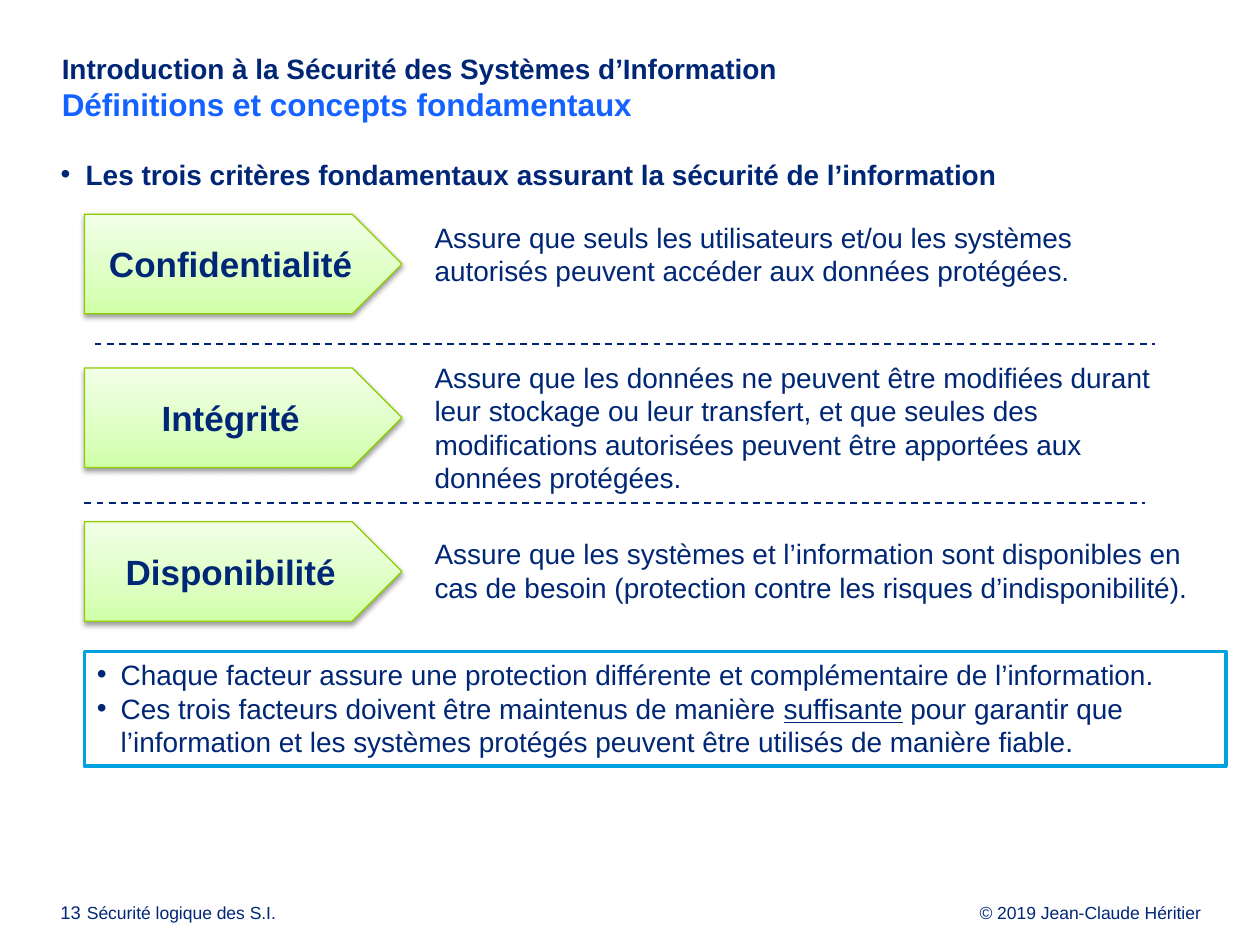
from pptx import Presentation
from pptx.dml.color import RGBColor
from pptx.enum.dml import MSO_LINE
from pptx.enum.shapes import MSO_CONNECTOR as Connector, MSO_SHAPE as Shape
from pptx.enum.text import MSO_ANCHOR as Anchor, MSO_AUTO_SIZE as AutoSize, PP_ALIGN as Align
from pptx.oxml.ns import qn
from pptx.util import Inches, Pt
from lxml.etree import SubElement

NAVY = "002776"
CRITERIA = [
    ("Confidentialité", 1.7,
     "Assure que seuls les utilisateurs et/ou les systèmes autorisés "
     "peuvent accéder aux données protégées."),
    ("Intégrité", 2.81,
     "Assure que les données ne peuvent être modifiées durant leur stockage "
     "ou leur transfert, et que seules des modifications autorisées peuvent "
     "être apportées aux données protégées."),
    ("Disponibilité", 4.21,
     "Assure que les systèmes et l’information sont disponibles en cas de "
     "besoin (protection contre les risques d’indisponibilité)."),
]


def color(value):
    """Turn a hex string into a colour."""
    return RGBColor.from_string(value)


def place(shape, box):
    """Move and size a shape to a box in inches."""
    shape.left, shape.top, shape.width, shape.height = map(Inches, box)


def format_run(run, size, bold=False, value=NAVY):
    """Set the font of a run."""
    font = run.font
    font.name, font.size, font.bold = "Arial", Pt(size), bold
    font.color.rgb = color(value)


def set_frame(shape, margins=(0.1, 0.05, 0.1, 0.05), anchor=Anchor.TOP):
    """Set wrapping, insets and anchor, and return the text frame."""
    frame = shape.text_frame
    frame.word_wrap, frame.auto_size = True, AutoSize.NONE
    frame.vertical_anchor = anchor
    (frame.margin_left, frame.margin_top,
     frame.margin_right, frame.margin_bottom) = map(Inches, margins)
    return frame


def set_bullet(paragraph, indent):
    """Give a paragraph a hanging round bullet."""
    properties = paragraph._p.get_or_add_pPr()
    properties.set("marL", str(Inches(indent)))
    properties.set("indent", str(Inches(-indent)))
    SubElement(properties, qn("a:buFont"), typeface="Arial")
    SubElement(properties, qn("a:buChar"), char="•")


def add_text(slide, box, text, size, align=Align.LEFT, spacing=None, **frame_options):
    """Add a one-paragraph text box."""
    shape = slide.shapes.add_textbox(*map(Inches, box))
    paragraph = set_frame(shape, **frame_options).paragraphs[0]
    paragraph.text, paragraph.alignment = text, align
    paragraph.line_spacing = spacing
    format_run(paragraph.runs[0], size)


def add_heading(slide, box):
    """Fill the title placeholder with its two lines."""
    title = slide.shapes.title
    place(title, box)
    paragraph = set_frame(title, (0.04, 0.03, 0, 0)).paragraphs[0]
    paragraph.text = ("Introduction à la Sécurité des Systèmes d’Information \v"
                      "Définitions et concepts fondamentaux")
    paragraph.alignment = Align.LEFT
    format_run(paragraph.runs[0], 16, True)
    format_run(paragraph.runs[1], 18, True, "1462FF")


def add_lead(slide, box):
    """Fill the body placeholder with the lead bullet."""
    body = slide.placeholders[1]
    place(body, box)
    paragraph = set_frame(body, (0.04, 0.02, 0, 0)).paragraphs[0]
    paragraph.text = "Les trois critères fondamentaux assurant la sécurité de l’information"
    paragraph.space_before = Pt(0)
    set_bullet(paragraph, 0.2)
    format_run(paragraph.runs[0], 16, True)


def add_arrow(slide, box, label):
    """Add a green gradient arrow with a soft shadow."""
    shape = slide.shapes.add_shape(Shape.PENTAGON, *map(Inches, box))
    shape.fill.gradient()
    shape.fill.gradient_angle = 90
    properties = shape._element.spPr
    stops = properties.find(qn("a:gradFill")).find(qn("a:gsLst"))
    for stop in list(stops):
        stops.remove(stop)
    for position, value in ((0, "D0FFA8"), (35, "DDFFC2"), (100, "F2FFE8")):
        stop = SubElement(stops, qn("a:gs"), pos=str(position * 1000))
        SubElement(stop, qn("a:srgbClr"), val=value)
    shape.line.color.rgb, shape.line.width = color("8FCF00"), Pt(0.75)
    shape.shadow.inherit = False
    shadow = SubElement(properties.find(qn("a:effectLst")), qn("a:outerShdw"),
                        blurRad=str(Pt(3.1)), dist=str(Pt(1.6)), dir="5400000", rotWithShape="0")
    shade = SubElement(shadow, qn("a:srgbClr"), val="000000")
    SubElement(shade, qn("a:alpha"), val="38000")
    paragraph = set_frame(shape, anchor=Anchor.MIDDLE).paragraphs[0]
    paragraph.text, paragraph.alignment = label, Align.CENTER
    format_run(paragraph.runs[0], 20, True)


def add_separator(slide, left, top, width):
    """Add a dashed horizontal line."""
    line = slide.shapes.add_connector(
        Connector.STRAIGHT, *map(Inches, (left, top, left + width, top)))
    line.line.color.rgb, line.line.width = color("002673"), Pt(1)
    line.line.dash_style = MSO_LINE.DASH
    SubElement(line._element.spPr, qn("a:effectLst"))


def add_criteria(slide, left, top, pitch):
    """Add one arrow and one definition for each criterion."""
    for index, (label, text_top, definition) in enumerate(CRITERIA):
        add_arrow(slide, (left, top + index * pitch, 2.52, 0.79), label)
        height = 1.18 if label == "Intégrité" else 0.64
        add_text(slide, (left + 2.68, text_top, 6.22, height), definition, 16)
    add_separator(slide, left + 0.08, 2.73, 8.42)
    add_separator(slide, left, 3.99, 8.42)


def add_summary(slide, box):
    """Add the framed box with two bullets."""
    shape = slide.shapes.add_shape(Shape.RECTANGLE, *map(Inches, box))
    shape.shadow.inherit = False
    shape.fill.solid()
    shape.fill.fore_color.rgb = color("FFFFFF")
    shape.line.color.rgb, shape.line.width = color("00A1DE"), Pt(2)
    frame = set_frame(shape)
    first, second = frame.paragraphs[0], frame.add_paragraph()
    first.text = ("Chaque facteur assure une protection différente "
                  "et complémentaire de l’information.")
    for text in ("Ces trois facteurs doivent être maintenus de manière ", "suffisante",
                 " pour garantir que l’information et les systèmes protégés "
                 "peuvent être utilisés de manière fiable."):
        second.add_run().text = text
    second.runs[1].font.underline = True
    for paragraph in frame.paragraphs:
        paragraph.alignment = Align.LEFT
        set_bullet(paragraph, 0.19)
        for run in paragraph.runs:
            format_run(run, 16)


def add_footer(slide, top):
    """Add the page number, course name and copyright."""
    for left, width, text, size, align in (
            (0.48, 0.26, "13", 10.5, Align.LEFT),
            (0.69, 2.53, "Sécurité logique des S.I.", 10, Align.LEFT),
            (7, 2.53, "© 2019 Jean-Claude Héritier", 10, Align.RIGHT)):
        add_text(slide, (left, top, width, 0.16), text, size, align, Pt(10.8),
                 margins=(0, 0, 0, 0))


def main():
    """Build and save the slide."""
    presentation = Presentation()
    presentation.slide_width, presentation.slide_height = Inches(10), Inches(7.5)
    slide = presentation.slides.add_slide(presentation.slide_layouts[1])
    add_heading(slide, (0.45, 0.38, 9.21, 0.69))
    add_lead(slide, (0.44, 1.23, 9.2, 0.39))
    add_criteria(slide, 0.67, 1.7, 1.22)
    add_summary(slide, (0.67, 5.17, 9.06, 0.91))
    add_footer(slide, 7.18)
    presentation.save("out.pptx")


if __name__ == "__main__":
    main()
